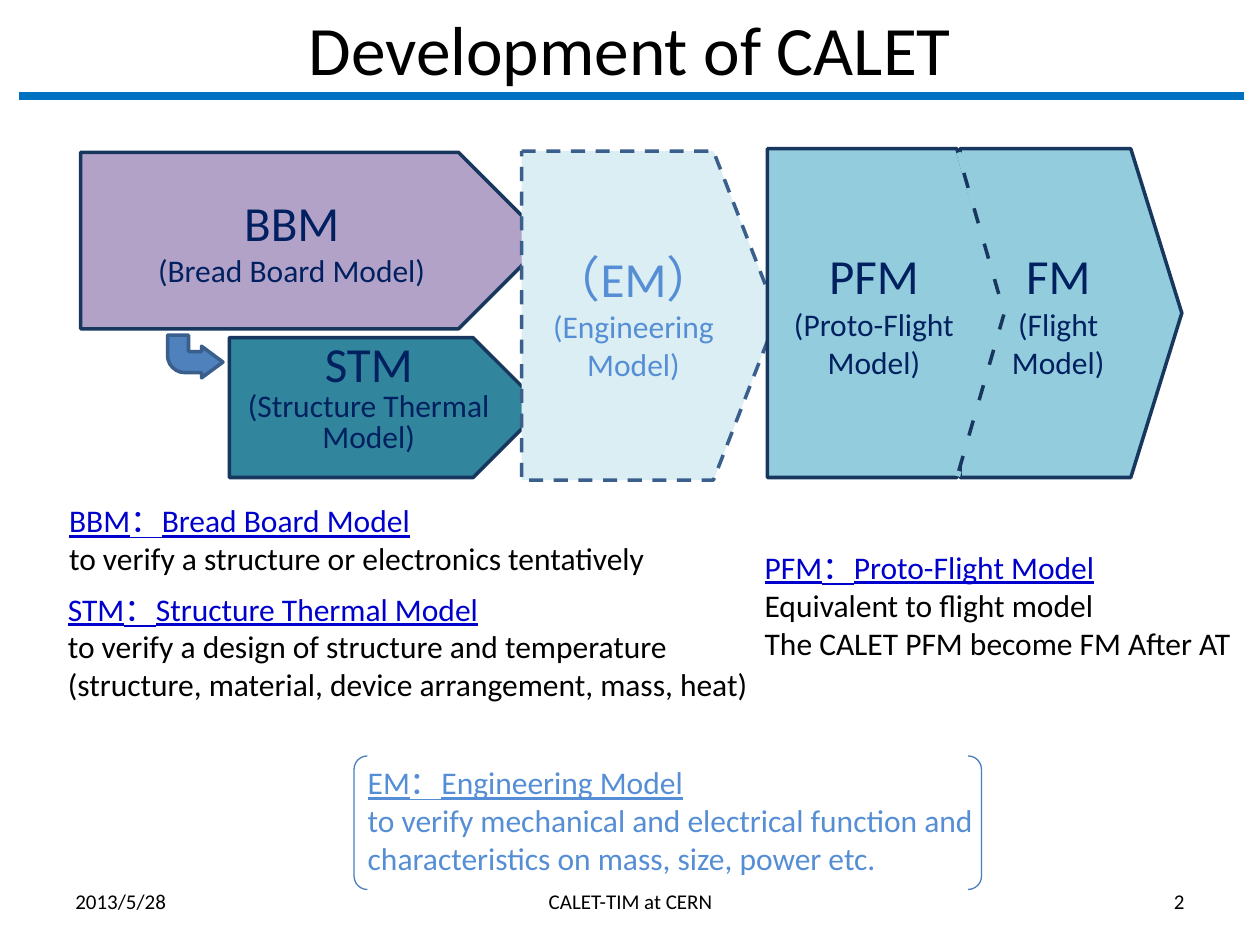
"""Build the slide on the development models of CALET."""
from lxml import etree
from pptx import Presentation
from pptx.dml.color import RGBColor
from pptx.enum.dml import MSO_LINE
from pptx.enum.shapes import MSO_CONNECTOR, MSO_SHAPE
from pptx.enum.text import MSO_ANCHOR, PP_ALIGN
from pptx.oxml.ns import qn
from pptx.util import Inches, Pt

LEFT, CENTER, RIGHT = PP_ALIGN.LEFT, PP_ALIGN.CENTER, PP_ALIGN.RIGHT
TOP, MIDDLE = MSO_ANCHOR.TOP, MSO_ANCHOR.MIDDLE
DASH = MSO_LINE.DASH
PENTAGON = MSO_SHAPE.PENTAGON
BLACK = RGBColor(0x00, 0x00, 0x00)
RULE_BLUE = RGBColor(0x00, 0x70, 0xC0)
NAVY = RGBColor(0x00, 0x20, 0x60)
EDGE = RGBColor(0x17, 0x37, 0x5E)
SOFT_EDGE = RGBColor(0x3A, 0x5F, 0x8C)
BRACKET = RGBColor(0x4B, 0x7E, 0xBC)
ARROW_BLUE = RGBColor(0x4F, 0x81, 0xBD)
HEADING_BLUE = RGBColor(0x00, 0x00, 0xCC)
LIGHT_BLUE = RGBColor(0x55, 0x8E, 0xD5)
TEAL = RGBColor(0x31, 0x85, 0x9C)
PURPLE = RGBColor(0xB3, 0xA2, 0xC7)
PALE = RGBColor(0xDB, 0xEE, 0xF4)
SKY = RGBColor(0x93, 0xCD, 0xDD)

TITLE = "Development of CALET"
FOOTERS = [
    ("2013/5/28", 0.5, 2.33, LEFT),
    ("CALET-TIM at CERN", 2.77, 4.47, CENTER),
    ("2", 7.17, 2.33, RIGHT),
]
STAGES = [
    ("STM", "(Structure Thermal Model)", (1.82, 2.68, 2.49, 1.11), 0.5, TEAL, EDGE, NAVY, None, 18),
    ("BBM", "(Bread Board Model)", (0.64, 1.21, 3.7, 1.4), 0.5, PURPLE, EDGE, NAVY, None, None),
    ("（EM）", "(Engineering Model)", (4.14, 1.2, 2.03, 2.61), 0.25, PALE, SOFT_EDGE, LIGHT_BLUE, DASH, None),
    ("FM", "(Flight Model)", (7.62, 1.18, 1.76, 2.61), 0.23, SKY, EDGE, NAVY, None, None),
    ("PFM", "(Proto-Flight Model)", (6.09, 1.18, 1.88, 2.61), 0.2, SKY, EDGE, NAVY, None, None),
]
NOTES = [
    ("BBM：Bread Board Model",
     ["to verify a structure or electronics tentatively"],
     (0.45, 3.93, 4.92, 0.71), HEADING_BLUE, BLACK),
    ("STM：Structure Thermal Model",
     ["to verify a design of structure and temperature",
      "(structure, material, device arrangement, mass, heat)"],
     (0.44, 4.63, 5.66, 1.01), HEADING_BLUE, BLACK),
    ("PFM：Proto-Flight Model",
     ["Equivalent to flight model", "The CALET PFM become FM After AT"],
     (5.97, 4.3, 3.95, 1.01), HEADING_BLUE, BLACK),
    ("EM：Engineering Model",
     ["to verify mechanical and electrical function and",
      "characteristics on mass, size, power etc."],
     (2.82, 6.01, 5.17, 1.01), LIGHT_BLUE, LIGHT_BLUE),
]
SEAM = [(7.61, 1.21), (7.97, 2.49), (7.6, 3.78)]


def inches(box):
    return [Inches(value) for value in box]


def write(frame, text, *, size, color, align=LEFT, underline=False, spacing=None):
    paragraph = frame.paragraphs[0]
    if paragraph.runs:
        paragraph = frame.add_paragraph()
    paragraph.alignment = align
    if spacing:
        paragraph.line_spacing = Pt(spacing)
    run = paragraph.add_run()
    run.text = text
    run.font.name = "Calibri"
    run.font.size = Pt(size)
    run.font.color.rgb = color
    run.font.underline = underline


def add_text_frame(slide, box, anchor=TOP, wrap=True):
    frame = slide.shapes.add_textbox(*inches(box)).text_frame
    frame.word_wrap = wrap
    frame.vertical_anchor = anchor
    return frame


def style(shape, fill, line, width, dash=None):
    shape.shadow.inherit = False
    if fill is None:
        shape.fill.background()
    else:
        shape.fill.solid()
        shape.fill.fore_color.rgb = fill
    shape.line.color.rgb = line
    shape.line.width = Pt(width)
    if dash:
        shape.line.dash_style = dash


def add_preset(slide, kind, box, adjustments, fill, line, width, dash=None):
    shape = slide.shapes.add_shape(kind, *inches(box))
    for index, value in enumerate(adjustments):
        shape.adjustments[index] = value
    style(shape, fill, line, width, dash)
    return shape


def add_header_and_footer(slide):
    rule = slide.shapes.add_connector(MSO_CONNECTOR.STRAIGHT, *inches((0.15, 0.76, 9.87, 0.76)))
    rule.line.color.rgb = RULE_BLUE
    rule.line.width = Pt(4.5)
    etree.SubElement(rule._element.spPr, qn("a:effectLst"))
    write(add_text_frame(slide, (0.5, 0, 9, 0.76), MIDDLE), TITLE, size=39.6, color=BLACK, align=CENTER)
    for text, left, width, align in FOOTERS:
        frame = add_text_frame(slide, (left, 6.95, width, 0.4), MIDDLE)
        write(frame, text, size=12, color=BLACK, align=align)


def add_stages(slide):
    for short, full, box, point, fill, edge, color, dash, spacing in STAGES:
        shape = add_preset(slide, PENTAGON, box, [point], fill, edge, 2, dash)
        frame = shape.text_frame
        frame.word_wrap = True
        frame.vertical_anchor = MIDDLE
        for text, size in ((short, 28), (full, 18)):
            write(frame, text, size=size, color=color, align=CENTER, spacing=spacing)


def add_notes(slide):
    for heading, lines, box, heading_color, color in NOTES:
        frame = add_text_frame(slide, box, wrap=False)
        write(frame, heading, size=18, color=heading_color, underline=True)
        for line in lines:
            write(frame, line, size=18, color=color)


def add_seam(slide):
    start, *rest = [inches(point) for point in SEAM]
    builder = slide.shapes.build_freeform(*start)
    builder.add_line_segments(rest, close=False)
    style(builder.convert_to_shape(), None, SKY, 3, DASH)


def main():
    presentation = Presentation()
    presentation.slide_width, presentation.slide_height = Inches(10), Inches(7.5)
    slide = presentation.slides.add_slide(presentation.slide_layouts[6])
    add_header_and_footer(slide)
    add_stages(slide)
    add_seam(slide)
    add_notes(slide)
    add_preset(slide, MSO_SHAPE.DOUBLE_BRACKET, (2.81, 6, 4.98, 1.06), [0.1], None, BRACKET, 0.75)
    arrow = add_preset(slide, MSO_SHAPE.BENT_ARROW, (1.33, 2.66, 0.44, 0.34),
                       [0.49, 0.37, 0.5, 0.4], ARROW_BLUE, SOFT_EDGE, 2)
    arrow._element.spPr.find(qn("a:xfrm")).set("flipV", "1")
    presentation.save("out.pptx")


if __name__ == "__main__":
    main()
